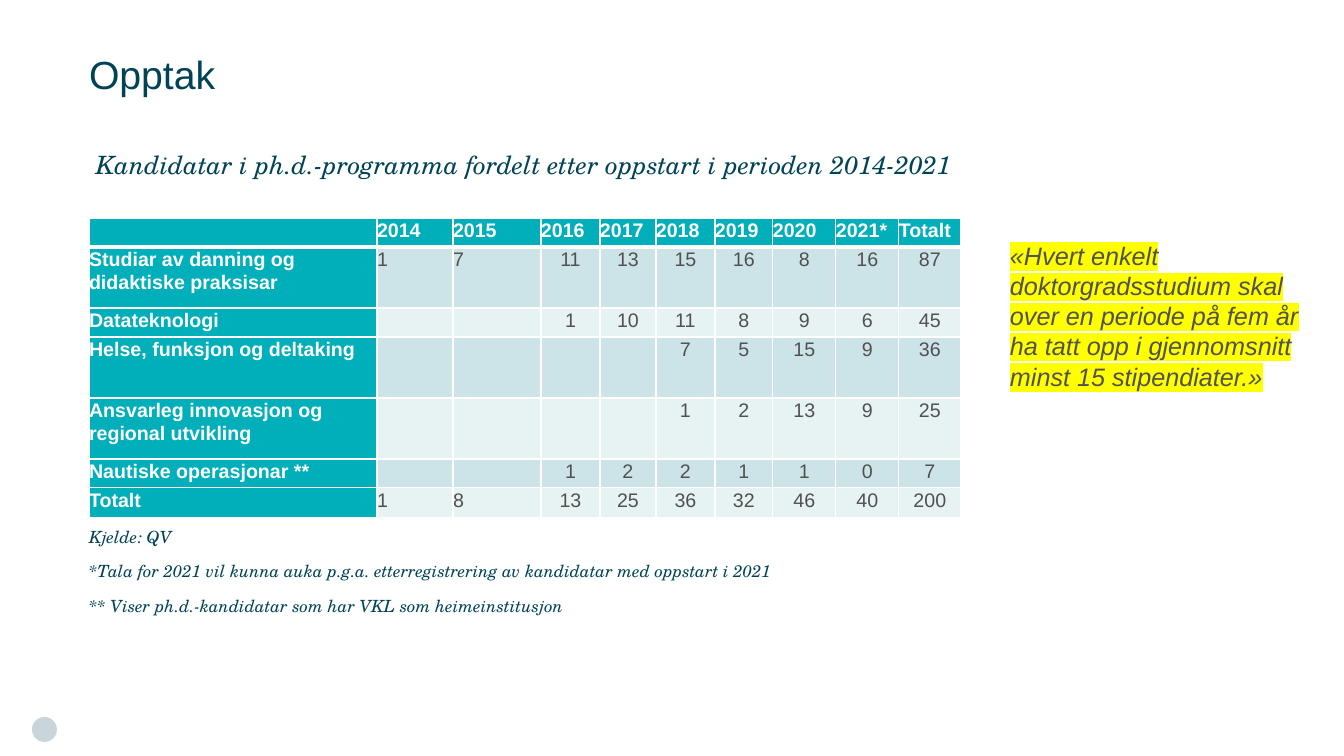
from lxml.etree import SubElement
from pptx import Presentation
from pptx.dml.color import RGBColor
from pptx.enum.shapes import MSO_SHAPE
from pptx.enum.text import MSO_ANCHOR, PP_ALIGN
from pptx.oxml.ns import qn
from pptx.util import Emu, Pt

NAVY = RGBColor(0x00, 0x43, 0x57)
TEAL = RGBColor(0x00, 0xAF, 0xBA)
BAND_DARK = RGBColor(0xCC, 0xE3, 0xE7)
BAND_LIGHT = RGBColor(0xE7, 0xF2, 0xF3)
GREY = RGBColor(0x51, 0x51, 0x51)
PALE = RGBColor(0xC9, 0xD5, 0xDA)
WHITE = RGBColor(0xFF, 0xFF, 0xFF)
YELLOW = RGBColor(0xFF, 0xFF, 0x00)

SANS, SERIF = "Arial", "TeX Gyre Schola"

COL_WIDTHS = [288, 76, 88, 59, 56, 59, 58, 63, 63, 62]
ROW_HEIGHTS = [29, 61, 29, 61, 61, 29, 30]
INTAKE = [
    ["", "2014", "2015", "2016", "2017", "2018", "2019", "2020", "2021*", "Totalt"],
    ["Studiar av danning og didaktiske praksisar", 1, 7, 11, 13, 15, 16, 8, 16, 87],
    ["Datateknologi", "", "", 1, 10, 11, 8, 9, 6, 45],
    ["Helse, funksjon og deltaking", "", "", "", "", 7, 5, 15, 9, 36],
    ["Ansvarleg innovasjon og regional utvikling", "", "", "", "", 1, 2, 13, 9, 25],
    ["Nautiske operasjonar **", "", "", 1, 2, 2, 1, 1, 0, 7],
    ["Totalt", 1, 8, 13, 25, 36, 32, 46, 40, 200],
]
NOTES = [
    "Kjelde: QV",
    "*Tala for 2021 vil kunna auka p.g.a. etterregistrering av kandidatar med oppstart i 2021",
    "** Viser ph.d.-kandidatar som har VKL som heimeinstitusjon",
]


def px(n):
    return Emu(round(n * 914400 / 100.8))


class SlideBuilder:
    def __init__(self, slide):
        self.shapes = slide.shapes

    def style(self, p, size, color, font=SANS, bold=False, italic=False):
        p.font.name, p.font.size = font, Pt(size)
        p.font.bold, p.font.italic = bold, italic
        p.font.color.rgb = color

    def text(self, box, lines, size, color, inset=(0, 0), anchor=MSO_ANCHOR.TOP,
             gap=0, highlight=None, **style):
        tf = self.shapes.add_textbox(*map(px, box)).text_frame
        tf.word_wrap, tf.vertical_anchor = True, anchor
        tf.margin_left = tf.margin_right = px(inset[0])
        tf.margin_top = tf.margin_bottom = px(inset[1])
        for i, line in enumerate(lines):
            p = tf.add_paragraph() if i else tf.paragraphs[0]
            r = p.add_run()
            r.text = line
            p.space_after = Pt(gap)
            self.style(p, size, color, **style)
            if highlight:
                mark = SubElement(r.font._element, qn("a:highlight"))
                SubElement(mark, qn("a:srgbClr"), val=str(highlight))

    def borders(self, cell, widths):
        tc_pr = cell._tc.get_or_add_tcPr()
        for side, width in zip("LRTB", widths):
            ln = SubElement(tc_pr, qn(f"a:ln{side}"), w=str(Pt(width)))
            fill = SubElement(ln, qn("a:solidFill"))
            SubElement(fill, qn("a:srgbClr"), val=str(WHITE))

    def cell(self, cell, value, row, col):
        heading = row == 0 or col == 0
        cell.margin_left = cell.margin_right = 0
        cell.margin_top = cell.margin_bottom = 0
        self.borders(cell, (1, 1, 3 if row == 1 else 1, 3 if row == 0 else 1))
        cell.fill.solid()
        band = BAND_DARK if row % 2 else BAND_LIGHT
        cell.fill.fore_color.rgb = TEAL if heading else band
        p = cell.text_frame.paragraphs[0]
        self.style(p, 14, WHITE if heading else GREY, bold=heading)
        if value != "":
            p.add_run().text = str(value)
            p.line_spacing = 1.07
            p.alignment = PP_ALIGN.CENTER if row and col > 2 else PP_ALIGN.LEFT

    def table(self, left, top, widths, heights, rows):
        frame = self.shapes.add_table(len(heights), len(widths), px(left), px(top),
                                      px(sum(widths)), px(sum(heights)))
        table = frame.table
        table.horz_banding = False
        for column, width in zip(table.columns, widths):
            column.width = px(width)
        for row, height in zip(table.rows, heights):
            row.height = px(height)
        for i, values in enumerate(rows):
            for j, value in enumerate(values):
                self.cell(table.cell(i, j), value, i, j)

    def shape(self, kind, box, color):
        sp = self.shapes.add_shape(kind, *map(px, box))
        sp.shadow.inherit = False
        sp.fill.solid()
        sp.fill.fore_color.rgb = color
        sp.line.fill.background()


def main():
    prs = Presentation()
    prs.slide_width, prs.slide_height = px(1344), px(756)
    s = SlideBuilder(prs.slides.add_slide(prs.slide_layouts[6]))

    # Corner emblem
    s.shape(MSO_SHAPE.OVAL, (32, 717, 25, 25), PALE)

    # Title and table heading
    s.text((89, 0, 1204, 148), ["Opptak"], 28, NAVY, anchor=MSO_ANCHOR.MIDDLE)
    s.text((96, 149, 1198, 40),
           ["Kandidatar i ph.d.-programma fordelt etter oppstart i perioden 2014-2021"],
           18, NAVY, font=SERIF, italic=True)

    # Intake by programme and year
    s.table(89, 218, COL_WIDTHS, ROW_HEIGHTS, INTAKE)

    # Source and footnotes
    s.text((89, 527, 1204, 100), NOTES, 12, NAVY, gap=10, font=SERIF, italic=True)

    # Highlighted requirement
    s.text((1000, 235, 333, 163),
           ["«Hvert enkelt doktorgradsstudium skal over en periode på fem år "
            "ha tatt opp i gjennomsnitt minst 15 stipendiater.»"],
           18, GREY, inset=(10, 5), highlight=YELLOW, italic=True)

    prs.save("out.pptx")


if __name__ == "__main__":
    main()
